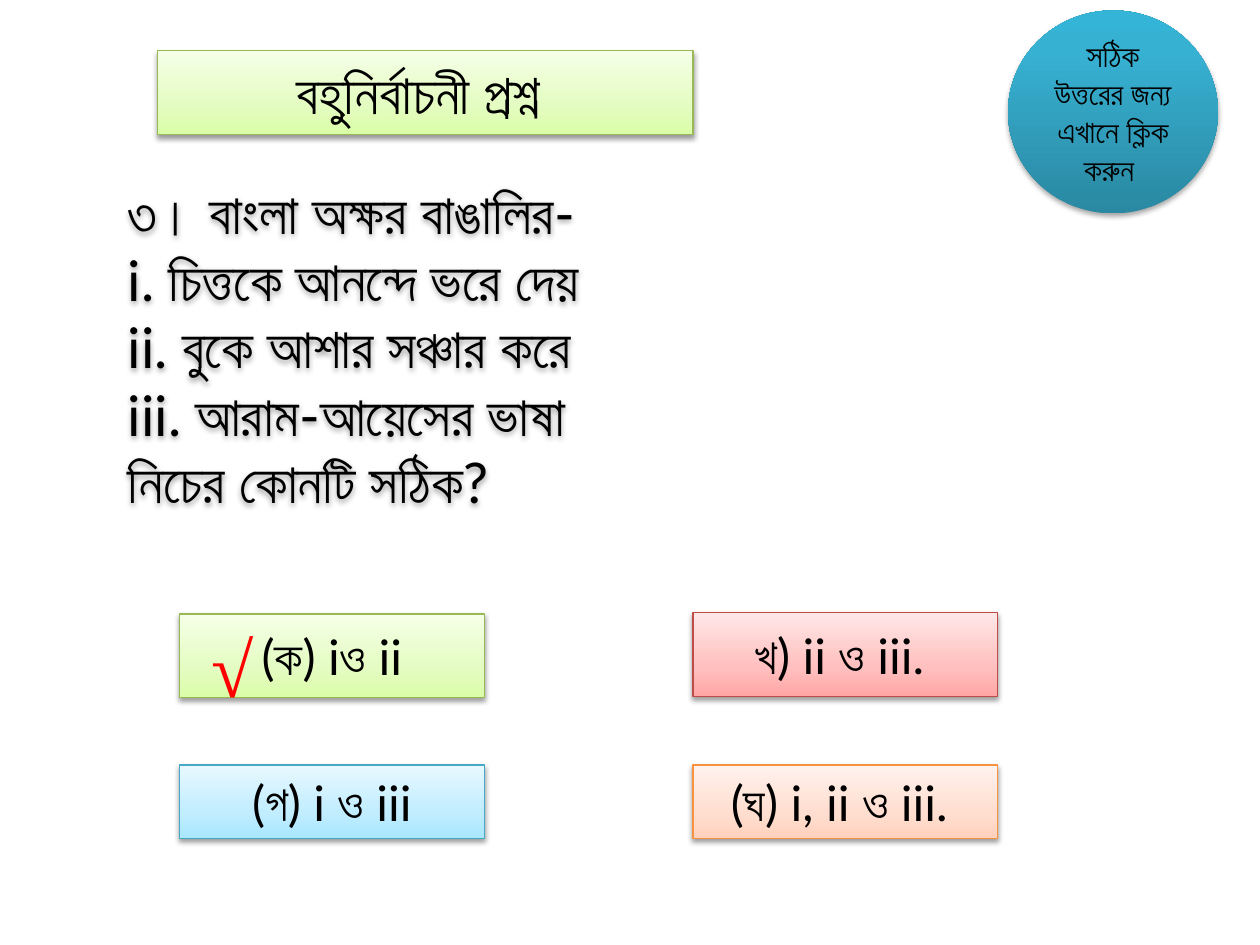
from dataclasses import dataclass
from lxml import etree
from pptx import Presentation
from pptx.dml.color import RGBColor
from pptx.enum.shapes import MSO_SHAPE
from pptx.enum.text import MSO_ANCHOR, MSO_AUTO_SIZE, PP_ALIGN
from pptx.oxml.ns import qn
from pptx.util import Pt

RECT, OVAL = MSO_SHAPE.RECTANGLE, MSO_SHAPE.OVAL
MID, TOP = MSO_ANCHOR.MIDDLE, MSO_ANCHOR.TOP
LEFT, MITTE, JUST = PP_ALIGN.LEFT, PP_ALIGN.CENTER, PP_ALIGN.JUSTIFY
NOFIT = MSO_AUTO_SIZE.NONE

HUES = {
    "text": "000000", "tick": "FF0000", "shade": "000000",
    "green0": "DAFDA7", "green1": "E4FCC2", "green2": "F5FFE7", "green": "98B955",
    "red0": "FFA6A5", "red1": "FFC0BF", "red2": "FFE7E7", "red": "BF4C48",
    "blue0": "A7E6FF", "blue1": "C1EDFF", "blue2": "E7F8FF", "blue": "46AAC5",
    "peach0": "FFD2BD", "peach1": "FFDED0", "peach2": "FFF2ED", "peach": "F69240",
    "teal0": "2A88A2", "teal1": "37B1D2", "teal2": "34B4D6",
}


@dataclass
class Box:
    x: float
    y: float
    w: float
    h: float

    def area(self) -> tuple:
        return Pt(self.x), Pt(self.y), Pt(self.w), Pt(self.h)


@dataclass
class Choice:
    text: str
    hue: str
    box: Box


LEFT_X, RIGHT_X, WIDE = 102.5, 396, 174.2
CHOICES = [
    Choice("(ক) iও ii", "green", Box(LEFT_X, 350.8, WIDE, 48)),
    Choice("খ) ii ও iii. ", "red", Box(RIGHT_X, 350, WIDE, 48)),
    Choice("(গ) i ও iii", "blue", Box(LEFT_X, 437.2, WIDE, 42)),
    Choice("(ঘ) i, ii ও iii. ", "peach", Box(RIGHT_X, 437.2, WIDE, 42)),
]
ASK = [
    "৩। বাংলা অক্ষর বাঙালির-",
    "i. চিত্তকে আনন্দে ভরে দেয়",
    "ii. বুকে আশার সঞ্চার করে",
    "iii. আরাম-আয়েসের ভাষা",
    "নিচের কোনটি সঠিক?",
]


def color(name: str) -> RGBColor:
    return RGBColor.from_string(HUES[name])


def paint(shape, hue: str, bend: int = 35) -> None:
    shape.fill.gradient()
    shape.fill.gradient_angle = 90
    stops = shape._element.spPr.find(".//" + qn("a:gsLst"))
    for old in list(stops):
        stops.remove(old)
    for i, spot in enumerate((0, bend, 100)):
        stop = etree.SubElement(stops, qn("a:gs"), pos=str(spot * 1000))
        etree.SubElement(stop, qn("a:srgbClr"), val=HUES[f"{hue}{i}"])
    if hue in HUES:
        shape.line.color.rgb = color(hue)
        shape.line.width = Pt(0.75)
    else:
        shape.line.fill.background()


def shade(shape, alpha: int = 38, gap: float = 1.6) -> None:
    shape.shadow.inherit = False
    list_ = shape._element.spPr.find(qn("a:effectLst"))
    cast = etree.SubElement(
        list_, qn("a:outerShdw"), blurRad=str(Pt(3.1)), dist=str(Pt(gap)),
        dir="5400000", rotWithShape="0")
    tone = etree.SubElement(cast, qn("a:srgbClr"), val=HUES["shade"])
    etree.SubElement(tone, qn("a:alpha"), val=str(alpha * 1000))


def write(shape, lines: list[str], size: float, align=MITTE, anchor=MID,
          face: str = "Lato", hue: str = "text", bold: bool = False) -> None:
    frame = shape.text_frame
    frame.word_wrap = True
    frame.auto_size = NOFIT
    frame.vertical_anchor = anchor
    frame.text = "\n".join(lines)
    for para in frame.paragraphs:
        para.alignment = align
        font = para.font
        font.name, font.size, font.bold = face, Pt(size), bold
        font.color.rgb = color(hue)


def draw(slide, choice: Choice) -> None:
    shape = slide.shapes.add_shape(RECT, *choice.box.area())
    paint(shape, choice.hue)
    shade(shape)
    write(shape, [choice.text], 28)


def main() -> None:
    deck = Presentation()
    deck.slide_width, deck.slide_height = Pt(720), Pt(540)
    slide = deck.slides.add_slide(deck.slide_layouts[5])

    title = slide.shapes.title
    title.left, title.top, title.width, title.height = Box(90, 28.8, 306, 48).area()
    paint(title, "green")
    shade(title)
    write(title, ["বহুনির্বাচনী প্রশ্ন "], 32)

    ask = slide.shapes.add_textbox(*Box(66, 90, 564, 216).area())
    shade(ask)
    write(ask, ASK, 32, JUST)

    for choice in CHOICES:
        draw(slide, choice)

    hint = slide.shapes.add_shape(OVAL, *Box(576, 6, 120, 116).area())
    paint(hint, "teal", 80)
    shade(hint, 35, 1.8)
    write(hint, ["সঠিক উত্তরের জন্য এখানে ক্লিক করুন "], 18)

    tick = slide.shapes.add_textbox(*Box(114, 350.8, 42, 60.5).area())
    write(tick, ["√"], 44, LEFT, TOP, "Times New Roman", "tick", True)

    deck.save("out.pptx")


if __name__ == "__main__":
    main()
